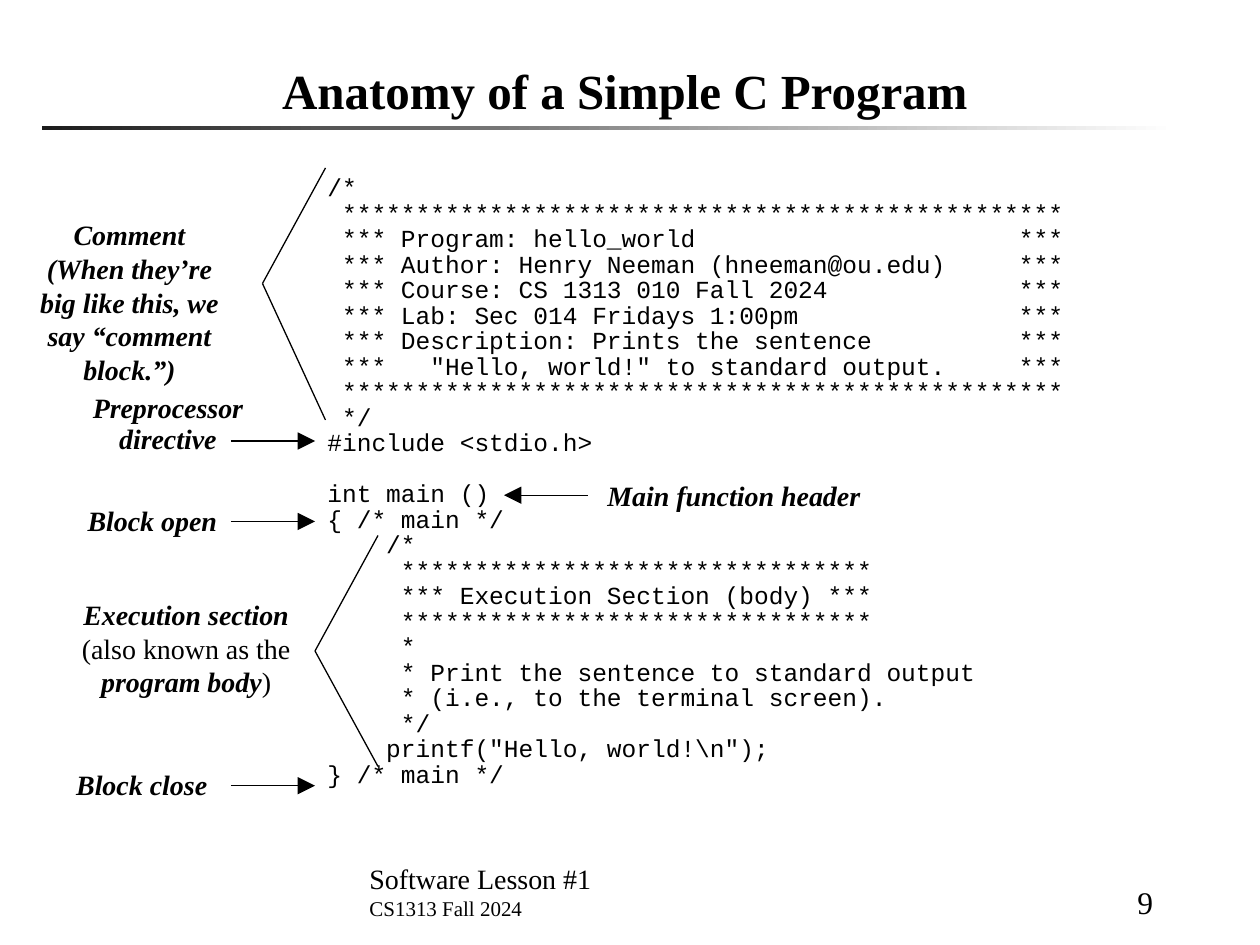
from itertools import pairwise

from lxml import etree
from pptx import Presentation
from pptx.dml.color import RGBColor
from pptx.enum.shapes import MSO_CONNECTOR, MSO_SHAPE
from pptx.enum.text import MSO_ANCHOR, PP_ALIGN
from pptx.oxml.ns import qn
from pptx.util import Pt

LEFT, CENTER, RIGHT = PP_ALIGN.LEFT, PP_ALIGN.CENTER, PP_ALIGN.RIGHT
TOP, BOTTOM = MSO_ANCHOR.TOP, MSO_ANCHOR.BOTTOM
STRAIGHT, RECTANGLE = MSO_CONNECTOR.STRAIGHT, MSO_SHAPE.RECTANGLE
COLORS = {"ink": "000000", "rule_start": "1C1C1C", "rule_end": "FFFFFF"}
SERIF, MONO = "Times New Roman", "Courier New"
CODE_LEADING = 14.58

PROGRAM = r'''
/*
 *************************************************
 *** Program: hello_world                      ***
 *** Author: Henry Neeman (hneeman@ou.edu)     ***
 *** Course: CS 1313 010 Fall 2024             ***
 *** Lab: Sec 014 Fridays 1:00pm               ***
 *** Description: Prints the sentence          ***
 ***   "Hello, world!" to standard output.     ***
 *************************************************
 */
#include <stdio.h>

int main ()
{ /* main */
    /*
     ********************************
     *** Execution Section (body) ***
     ********************************
     *
     * Print the sentence to standard output
     * (i.e., to the terminal screen).
     */
    printf("Hello, world!\n");
} /* main */
'''.strip("\n")


def color(name):
    """Return the named palette colour."""
    return RGBColor.from_string(COLORS[name])


def add_run(paragraph, text, size, font=SERIF, bold=False, italic=False):
    """Append one formatted run to a paragraph."""
    run = paragraph.add_run()
    run.text = text
    run.font.size, run.font.name = Pt(size), font
    run.font.bold, run.font.italic = bold, italic
    run.font.color.rgb = color("ink")


def add_frame(shapes, box, anchor=TOP):
    """Add a wrapping text box and return its text frame."""
    frame = shapes.add_textbox(*map(Pt, box)).text_frame
    frame.word_wrap, frame.vertical_anchor = True, anchor
    return frame


def add_paragraphs(frame, count, align=LEFT):
    """Return the given number of aligned paragraphs in a new frame."""
    paragraphs = [frame.paragraphs[0]]
    paragraphs += [frame.add_paragraph() for _ in range(count - 1)]
    for paragraph in paragraphs:
        paragraph.alignment = align
    return paragraphs


def add_line(shapes, start, end, arrow):
    """Draw a thin line, with an arrowhead at its end if wanted."""
    line = shapes.add_connector(STRAIGHT, *map(Pt, start + end))
    line.line.color.rgb, line.line.width = color("ink"), Pt(0.75)
    if arrow:
        etree.SubElement(line.line._get_or_add_ln(), qn("a:tailEnd"),
                         type="triangle", w="lg", len="lg")
    etree.SubElement(line._element.spPr, qn("a:effectLst"))


def add_header(slide, box):
    """Place the title and the fading rule beneath it."""
    left, top, width, height = box
    title = add_frame(slide.shapes, box, BOTTOM)
    heading, = add_paragraphs(title, 1, CENTER)
    add_run(heading, "Anatomy of a Simple C Program", 28, bold=True)
    rule = slide.shapes.add_shape(
        RECTANGLE, Pt(left - 18), Pt(top + height), Pt(width + 18), Pt(2.4))
    rule.shadow.inherit = False
    rule.line.fill.background()
    rule.fill.gradient()
    rule.fill.gradient_angle = 0
    for stop, name in zip(rule.fill.gradient_stops, ("rule_start", "rule_end")):
        stop.color.rgb = color(name)


def add_program(slide, box):
    """Place the program listing, with blank lines as paragraph spacing."""
    frame = add_frame(slide.shapes, box)
    frame.margin_top = Pt(22.7)
    lines = PROGRAM.split("\n")
    gaps = {after for before, after in pairwise(range(len(lines))) if not lines[before]}
    numbered = [(n, line) for n, line in enumerate(lines) if line]
    for (n, line), paragraph in zip(numbered, add_paragraphs(frame, len(numbered))):
        paragraph.line_spacing = Pt(CODE_LEADING)
        if n in gaps:
            paragraph.space_before = Pt(CODE_LEADING)
        add_run(paragraph, line, 14, MONO)


def add_note(slide, box, paragraphs, route, align=CENTER):
    """Group a label with an arrow or a bracket routed from its corner."""
    shapes = slide.shapes.add_group_shape().shapes
    frame = add_frame(shapes, box)
    for runs, paragraph in zip(paragraphs, add_paragraphs(frame, len(paragraphs), align)):
        for text, strong in runs:
            add_run(paragraph, text, 16, bold=strong, italic=strong)
    points = [(box[0] + x, box[1] + y) for x, y in route]
    for start, end in pairwise(points):
        add_line(shapes, start, end, arrow=len(points) == 2)
    return frame


def add_notes(slide, left, top):
    """Place all notes around the listing, relative to its corner."""
    def note(x, y, width, height, paragraphs, route, align=CENTER):
        return add_note(slide, (left + x, top + y, width, height),
                        paragraphs, route, align)

    comment = note(-168, 43, 144, 85,
                   [[("Comment", True)],
                    [("(When they’re big like this, we say “comment block.”)", True)]],
                   [(174, -25), (138, 41), (174, 119)])
    comment.paragraphs[0]._p.get_or_add_pPr().set("marR", str(Pt(20)))
    directive = note(-138, 144, 108, 42, [[("Preprocessor directive", True)]],
                     [(90, 30), (138, 30)])
    directive.paragraphs[0].line_spacing = 0.9
    note(160, 192, 168, 26.6, [[("Main function header", True)]],
         [(-4, 13), (-52, 13)], LEFT)
    note(-138, 206, 90, 26.6, [[("Block open", True)]], [(90, 14), (138, 14)])
    note(-142.6, 260, 138, 65,
         [[("Execution section ", True), ("(also known as the", False),
           (" program body", True), (")", False)]],
         [(178.6, -32), (142.6, 34), (178.6, 100)])
    note(-144, 357, 90, 26.6, [[("Block close", True)]], [(96, 14), (144, 14)])


def add_footer(slide, box):
    """Place the lesson lines and the slide number."""
    left, top, width, height = box
    lesson = add_frame(slide.shapes, (left, top, 348, height), BOTTOM)
    name, term = add_paragraphs(lesson, 2)
    add_run(name, "Software Lesson #1", 16)
    add_run(term, "CS1313 Fall 2024", 12)
    number = add_frame(slide.shapes, (left + width - 102, top, 102, height), BOTTOM)
    add_run(add_paragraphs(number, 1, RIGHT)[0], "9", 18)


def main():
    """Build the slide and save it."""
    deck = Presentation()
    deck.slide_width, deck.slide_height = Pt(720), Pt(540)
    slide = deck.slides.add_slide(deck.slide_layouts[6])
    add_header(slide, (42, 30, 630, 42))
    add_program(slide, (180, 78, 444, 414))
    add_notes(slide, 180, 78)
    add_footer(slide, (204, 493.5, 462, 36))
    deck.save("out.pptx")


if __name__ == "__main__":
    main()
